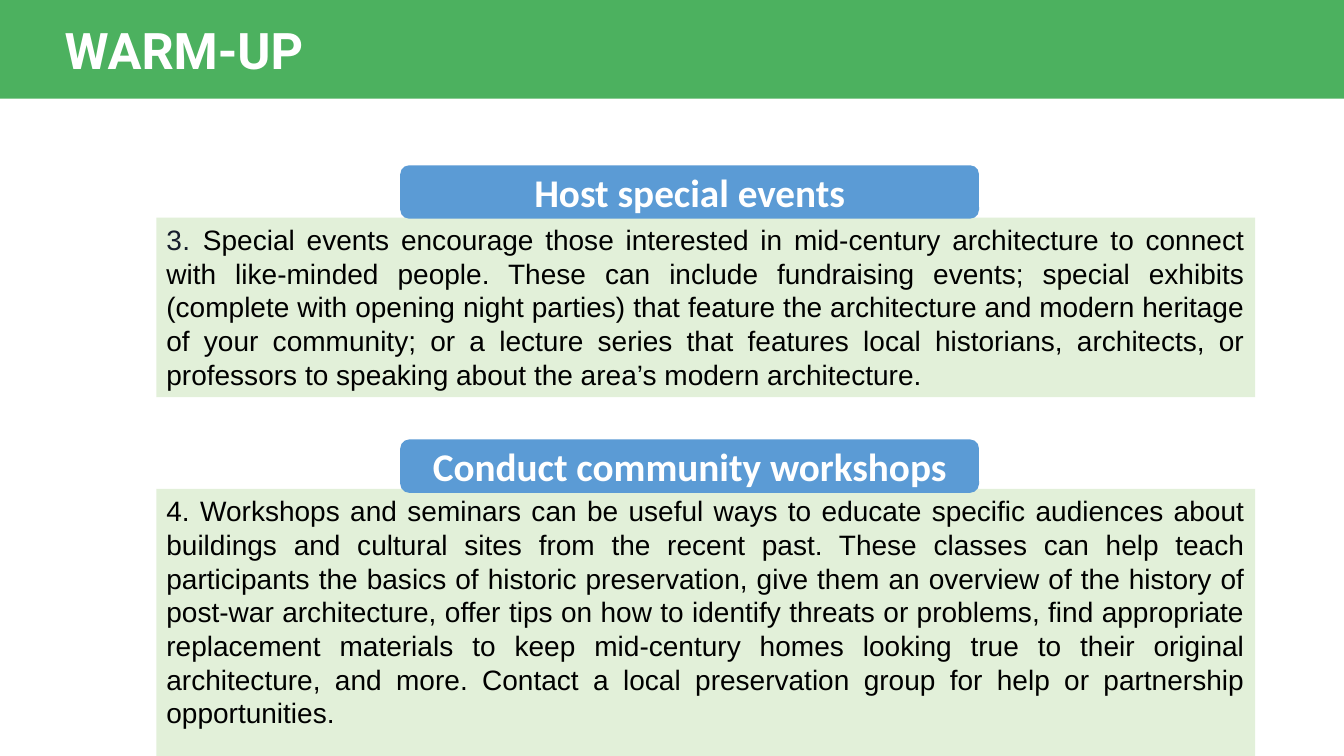
from dataclasses import dataclass

from pptx import Presentation
from pptx.dml.color import RGBColor
from pptx.enum.shapes import MSO_SHAPE
from pptx.enum.text import MSO_ANCHOR, MSO_AUTO_SIZE, PP_ALIGN
from pptx.oxml.xmlchemy import OxmlElement
from pptx.shapes.autoshape import Shape
from pptx.slide import Slide
from pptx.util import Inches, Pt


@dataclass(frozen=True)
class Theme:
    band: RGBColor = RGBColor(0x4C, 0xB1, 0x5F)
    panel: RGBColor = RGBColor(0xE2, 0xF0, 0xD9)
    heading: RGBColor = RGBColor(0x5B, 0x9B, 0xD5)
    light: RGBColor = RGBColor(0xFF, 0xFF, 0xFF)
    dark: RGBColor = RGBColor(0x00, 0x00, 0x00)
    number: RGBColor = RGBColor(0x17, 0x1E, 0x2C)
    title_font: str = "Roboto"
    heading_font: str = "Calibri"
    body_font: str = "Arial"
    title_size: int = 36
    heading_size: int = 28
    body_size: int = 20


@dataclass(frozen=True)
class Box:
    left: float
    top: float
    width: float
    height: float


@dataclass(frozen=True)
class Activity:
    heading: str
    number: str
    description: str
    heading_top: float
    panel_top: float
    panel_height: float
    number_color: RGBColor
    number_spacing: int  # hundredths of a point


THEME = Theme()
SLIDE_WIDTH, SLIDE_HEIGHT = 13.33, 7.5
PANEL_LEFT, PANEL_WIDTH = 1.55, 10.9
HEADING_LEFT, HEADING_WIDTH, HEADING_HEIGHT = 3.97, 5.74, 0.53

ACTIVITIES = [
    Activity(
        "Host special events",
        "3. ",
        "Special events encourage those interested in mid-century architecture to "
        "connect with like-minded people. These can include fundraising events; "
        "special exhibits (complete with opening night parties) that feature the "
        "architecture and modern heritage of your community; or a lecture series "
        "that features local historians, architects, or professors to speaking "
        "about the area’s modern architecture.",
        1.64, 2.16, 1.78, THEME.number, 30,
    ),
    Activity(
        "Conduct community workshops",
        "4. ",
        "Workshops and seminars can be useful ways to educate specific audiences "
        "about buildings and cultural sites from the recent past. These classes can "
        "help teach participants the basics of historic preservation, give them an "
        "overview of the history of post-war architecture, offer tips on how to "
        "identify threats or problems, find appropriate replacement materials to "
        "keep mid-century homes looking true to their original architecture, and "
        "more. Contact a local preservation group for help or partnership "
        "opportunities.",
        4.36, 4.85, 2.79, THEME.dark, 0,
    ),
]


def place(shape: Shape, box: Box) -> None:
    shape.left, shape.top = Inches(box.left), Inches(box.top)
    shape.width, shape.height = Inches(box.width), Inches(box.height)


def paint(shape: Shape, color: RGBColor) -> None:
    shape.fill.solid()
    shape.fill.fore_color.rgb = color
    shape.line.fill.background()


def add_block(slide: Slide, kind: MSO_SHAPE, box: Box, color: RGBColor) -> Shape:
    block = slide.shapes.add_shape(kind, 0, 0, 0, 0)
    place(block, box)
    paint(block, color)
    block.shadow.inherit = False
    return block


def format_text(shape: Shape, font: str, size: int, color: RGBColor, bold: bool,
                align: PP_ALIGN, anchor: MSO_ANCHOR) -> None:
    frame = shape.text_frame
    frame.word_wrap = True
    frame.auto_size = MSO_AUTO_SIZE.NONE
    frame.vertical_anchor = anchor
    paragraph = frame.paragraphs[0]
    paragraph.alignment = align
    paragraph.space_before = Pt(0)
    for run in paragraph.runs:
        run.font.name, run.font.size = font, Pt(size)
        run.font.bold, run.font.color.rgb = bold, color


def add_title(slide: Slide, wording: str) -> None:
    title = slide.shapes.title
    place(title, Box(0.54, 0.14, 5, 0.71))
    title.text_frame.text = wording
    format_text(title, THEME.title_font, THEME.title_size, THEME.light, True,
                PP_ALIGN.LEFT, MSO_ANCHOR.TOP)
    # The band lies behind the title
    band = add_block(slide, MSO_SHAPE.RECTANGLE, Box(0, 0, SLIDE_WIDTH, 0.98), THEME.band)
    title.element.addprevious(band.element)


def fill_panel(panel: Shape, activity: Activity) -> None:
    place(panel, Box(PANEL_LEFT, activity.panel_top, PANEL_WIDTH, activity.panel_height))
    paint(panel, THEME.panel)
    paragraph = panel.text_frame.paragraphs[0]
    paragraph.text = activity.number
    paragraph.add_run().text = activity.description
    format_text(panel, THEME.body_font, THEME.body_size, THEME.dark, False,
                PP_ALIGN.JUSTIFY, MSO_ANCHOR.TOP)
    # Plain paragraph without bullet or hanging indent
    properties = paragraph._p.get_or_add_pPr()
    properties.set("marL", "0")
    properties.set("indent", "0")
    properties.append(OxmlElement("a:buNone"))
    number = paragraph.runs[0]
    number.font.color.rgb = activity.number_color
    number._r.get_or_add_rPr().set("spc", str(activity.number_spacing))


def add_heading(slide: Slide, activity: Activity) -> None:
    heading = add_block(
        slide, MSO_SHAPE.ROUNDED_RECTANGLE,
        Box(HEADING_LEFT, activity.heading_top, HEADING_WIDTH, HEADING_HEIGHT),
        THEME.heading)
    heading.text_frame.text = activity.heading
    format_text(heading, THEME.heading_font, THEME.heading_size, THEME.light, True,
                PP_ALIGN.CENTER, MSO_ANCHOR.MIDDLE)


def main() -> None:
    presentation = Presentation()
    presentation.slide_width = Inches(SLIDE_WIDTH)
    presentation.slide_height = Inches(SLIDE_HEIGHT)
    # The "Two Content" layout has a title and two body placeholders
    slide = presentation.slides.add_slide(presentation.slide_layouts[3])
    add_title(slide, "WARM-UP")
    for position, activity in enumerate(ACTIVITIES, start=1):
        fill_panel(slide.placeholders[position], activity)
        add_heading(slide, activity)
    presentation.save("out.pptx")


if __name__ == "__main__":
    main()
